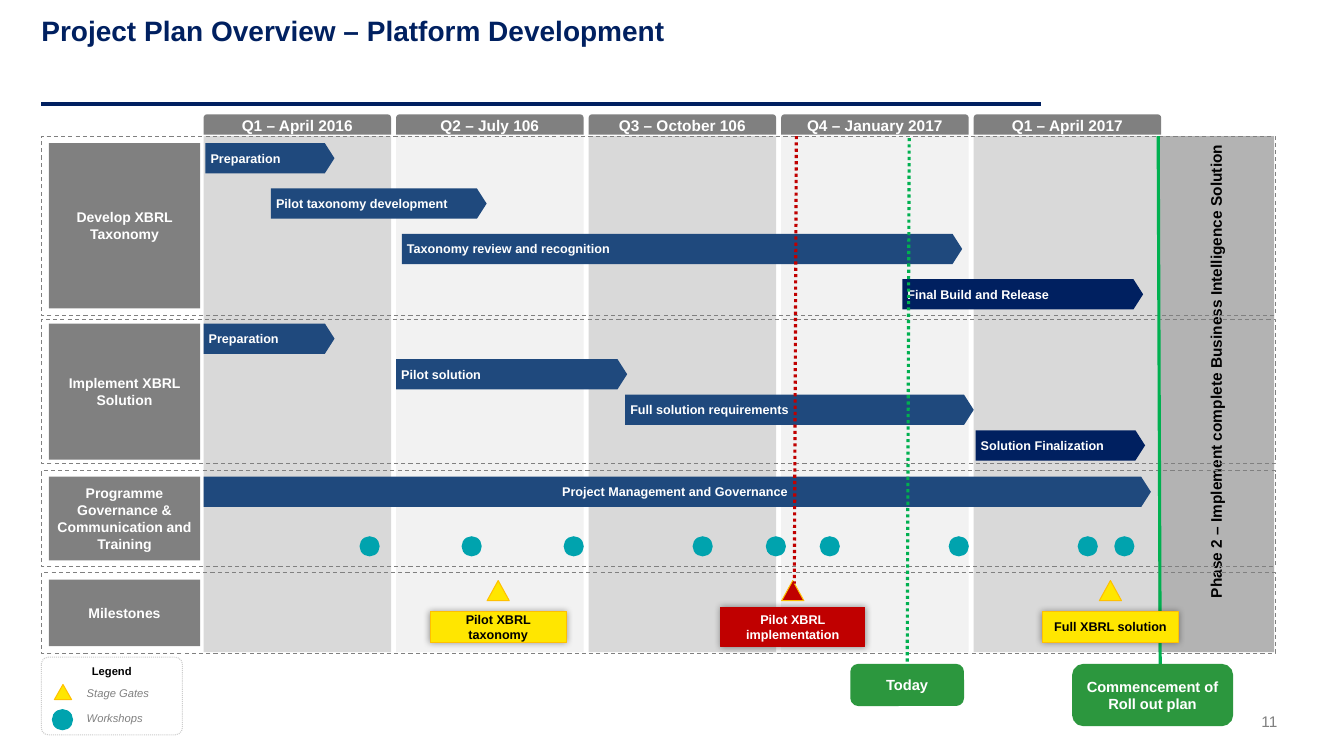
import collections
import dataclasses
import pptx
import pptx.util
import pptx.dml.color
import pptx.enum.dml
import pptx.enum.shapes
import pptx.enum.text
import pptx.oxml
import pptx.oxml.ns

Kind = pptx.enum.shapes.MSO_SHAPE
Dash = pptx.enum.dml.MSO_LINE
Align = pptx.enum.text.PP_ALIGN
Anchor = pptx.enum.text.MSO_ANCHOR
Box = collections.namedtuple("Box", "x y w h")


@dataclasses.dataclass(frozen=True)
class Theme:
    """Colours, type sizes and grid measures of the plan."""
    font: str = "Arial"
    navy: str = "002060"
    blue: str = "1F497D"
    gray: str = "808080"
    dark: str = "D9D9D9"
    light: str = "F2F2F2"
    phase: str = "B3B3B3"
    pale: str = "CCCCCC"
    teal: str = "00A3AE"
    yellow: str = "FFE600"
    gold: str = "FFC000"
    red: str = "C00000"
    green: str = "00B050"
    leaf: str = "2C973E"
    white: str = "FFFFFF"
    black: str = "000000"
    title: float = 20
    head: float = 11
    call: float = 10.5
    tag: float = 10
    bar: float = 9
    note: float = 8
    cell: float = 0.1
    pitch: float = 19.1
    band: float = 18.6


T = Theme()
PAGE = Box(0, 0, 133.33, 75)
PLAN = Box(4.1, 13.5, 122.4, 51.2)
TIME = Box(20.2, 13.5, 5 * T.pitch, 51.2)
QUARTERS = ["Q1 – April 2016", "Q2 – July 106", "Q3 – October 106",
            "Q4 – January 2017", "Q1 – April 2017"]
LANES = [
    ("Develop XBRL Taxonomy", 13.5, 17.8, 0.7, 4.5, [
        ("Preparation", 0.01, 0.67, T.blue),
        ("Pilot taxonomy development", 0.35, 1.12, T.blue),
        ("Taxonomy review and recognition", 1.03, 2.91, T.blue),
        ("Final Build and Release", 3.63, 1.25, T.navy)]),
    ("Implement XBRL Solution", 31.7, 14.3, 0.4, 3.53, [
        ("Preparation", 0, 0.68, T.blue),
        ("Pilot solution", 1, 1.2, T.blue),
        ("Full solution requirements", 2.19, 1.81, T.blue),
        ("Solution Finalization", 4.01, 0.88, T.navy)]),
    ("Programme Governance & Communication and Training", 46.7, 9.5, 0.6, 0, [
        ("Project Management and Governance", 0, 4.92, T.blue)]),
    ("Milestones", 56.8, 8, 0.7, 0, []),
]
SHOPS = [0.81, 1.34, 1.87, 2.54, 2.92, 3.2, 3.87, 4.54, 4.73]
GATES = [("Pilot XBRL taxonomy", 1.53, 13.5, 3, T.yellow, T.gold, T.black),
         ("Pilot XBRL implementation", 3.06, 14.3, 3.9, T.red, T.red, T.white),
         ("Full XBRL solution", 4.71, 13.5, 3, T.yellow, T.gold, T.black)]


def rgb(tint):
    """Turn a hex string into a colour."""
    return pptx.dml.color.RGBColor.from_string(tint)


def emu(*cells):
    """Turn grid cells into slide lengths."""
    return [pptx.util.Inches(n * T.cell) for n in cells]


def col(quarter):
    """Give the grid column at which a quarter starts."""
    return TIME.x + quarter * T.pitch


def write(item, text, size, tint, align=Align.LEFT, anchor=Anchor.MIDDLE,
          pad=(0.5, 0.5), bold=True, italic=False, wrap=True, lead=None):
    """Put one formatted run into a shape."""
    frame = item.text_frame
    frame.word_wrap = wrap
    frame.auto_size = pptx.enum.text.MSO_AUTO_SIZE.NONE
    frame.vertical_anchor = anchor
    frame.margin_left, frame.margin_top = emu(*pad)
    frame.margin_right, frame.margin_bottom = emu(*pad)
    line = frame.paragraphs[0]
    line.alignment = align
    if lead:
        line.line_spacing = lead
    run = line.add_run()
    run.text = text
    run.font.name, run.font.size = T.font, pptx.util.Pt(size)
    run.font.bold, run.font.italic = bold, italic
    run.font.color.rgb = rgb(tint)


def label(slide, box, text, size, tint, **look):
    """Add a text box."""
    item = slide.shapes.add_textbox(*emu(*box))
    write(item, text, size, tint, **look)
    return item


def shape(slide, kind, box, fill=None, edge=None, width=0.75, dash=None):
    """Add a flat preset shape."""
    item = slide.shapes.add_shape(kind, *emu(*box))
    item.shadow.inherit = False
    if fill:
        item.fill.solid()
        item.fill.fore_color.rgb = rgb(fill)
    else:
        item.fill.background()
    if edge:
        item.line.color.rgb = rgb(edge)
        item.line.width = pptx.util.Pt(width)
        item.line.dash_style = dash
    else:
        item.line.fill.background()
    return item


def rule(slide, start, end, tint, width=2.25, dash=None):
    """Add a straight line."""
    item = slide.shapes.add_connector(
        pptx.enum.shapes.MSO_CONNECTOR.STRAIGHT, *emu(*start, *end))
    item.line.color.rgb = rgb(tint)
    item.line.width = pptx.util.Pt(width)
    item.line.dash_style = dash
    pptx.oxml.ns.qn("a:effectLst")
    item._element.spPr.append(pptx.oxml.parse_xml(
        '<a:effectLst %s/>' % pptx.oxml.ns.nsdecls("a")))


def glow(item):
    """Give a shape a soft centred shadow."""
    effects = item._element.spPr.find(pptx.oxml.ns.qn("a:effectLst"))
    effects.append(pptx.oxml.parse_xml(
        '<a:outerShdw %s blurRad="63500" dist="0"><a:srgbClr val="%s">'
        '<a:alpha val="40000"/></a:srgbClr></a:outerShdw>'
        % (pptx.oxml.ns.nsdecls("a"), T.black)))


def header(slide, box):
    """Place the title, its rule and the page number."""
    title = slide.shapes.title
    title.left, title.top, title.width, title.height = emu(*box)
    write(title, "Project Plan Overview – Platform Development", T.title,
          T.navy, anchor=Anchor.TOP, pad=(0, 0.4), lead=0.85)
    base = box.y + box.h + 0.1
    rule(slide, (box.x, base), (box.x + box.w, base), T.navy, 3)
    label(slide, Box(PAGE.w - 17.1, PAGE.h - 4.4, 10.5, 2.2), "11", T.head,
          T.gray, align=Align.RIGHT, anchor=Anchor.TOP, pad=(0, 0), bold=False)


def calendar(slide, box):
    """Place the quarter bands, their heads and the next phase."""
    for n, name in enumerate(QUARTERS):
        shape(slide, Kind.RECTANGLE, Box(col(n), box.y, T.band, box.h),
              T.light if n % 2 else T.dark)
        head = shape(slide, Kind.ROUND_2_SAME_RECTANGLE,
                     Box(col(n), box.y - 2.15, T.band, 2), T.gray)
        write(head, name, T.head, T.white, align=Align.CENTER, wrap=False)
    left, wide = 114.9, 11.5
    shape(slide, Kind.RECTANGLE, Box(left, box.y, wide, box.h), T.phase)
    text = label(slide, Box(97.5, 35.4, 46.2, 2.9),
                 "Phase 2 – Implement complete Business Intelligence Solution",
                 T.head, T.black, align=Align.CENTER, wrap=False)
    text.rotation = 270


def lane(slide, box, name, pad, step, bars):
    """Place one dashed lane with its tag and bars."""
    shape(slide, Kind.RECTANGLE, box, None, T.gray, 0.75, Dash.DASH)
    tag = shape(slide, Kind.RECTANGLE,
                Box(box.x + 0.75, box.y + pad, 15, box.h - 2 * pad), T.gray)
    write(tag, name, T.tag, T.white, align=Align.CENTER)
    for n, (text, start, span, tint) in enumerate(bars):
        bar = shape(slide, Kind.PENTAGON, Box(
            col(start), box.y + pad + n * step, span * T.pitch, 3), tint)
        bar.adjustments[0] = 0.32
        write(bar, text, T.bar, T.white,
              align=Align.LEFT if step else Align.CENTER)


def gates(slide, box):
    """Place the stage gates with their labels."""
    for name, spot, wide, high, fill, edge, ink in GATES:
        mid = col(spot)
        shape(slide, Kind.ISOSCELES_TRIANGLE,
              Box(mid - 1.1, box.y + 0.8, 2.2, 2), fill, T.gold)
        card = shape(slide, Kind.RECTANGLE, Box(
            mid - wide / 2, box.y + 5.4 - high / 2, wide, high), fill, edge)
        glow(card)
        write(card, name, T.bar, ink, align=Align.CENTER, pad=(0.9, 0.4))


def legend(slide, box):
    """Place the legend."""
    frame = shape(slide, Kind.ROUNDED_RECTANGLE, box, None, T.pale, 0.75,
                  Dash.ROUND_DOT)
    frame.adjustments[0] = 0.09
    write(frame, "Legend", T.note, T.black, align=Align.CENTER,
          anchor=Anchor.TOP, pad=(1, 0.5))
    shape(slide, Kind.ISOSCELES_TRIANGLE,
          Box(box.x + 1.3, box.y + 2.7, 1.7, 1.5), T.yellow, T.gold)
    shape(slide, Kind.OVAL, Box(box.x + 1.1, box.y + 5.2, 2, 2), T.teal, T.teal)
    for n, name in enumerate(["Stage Gates", "Workshops"]):
        label(slide, Box(box.x + 4.1, box.y + 2.7 + 2.5 * n, 6.7, 1.5), name,
              T.note, T.gray, anchor=Anchor.TOP, pad=(0.4, 0.4), bold=False,
              italic=True, wrap=False, lead=0.85)


def callout(slide, box, name):
    """Place a rounded green label."""
    card = shape(slide, Kind.ROUNDED_RECTANGLE, box, T.leaf, T.leaf, 2)
    write(card, name, T.call, T.white, align=Align.CENTER, pad=(1, 0.5))


def main():
    """Build and save the slide."""
    deck = pptx.Presentation()
    deck.slide_width, deck.slide_height = emu(PAGE.w, PAGE.h)
    slide = deck.slides.add_slide(deck.slide_layouts[5])
    header(slide, Box(PLAN.x, 1.4, 99.2, 8.8))
    calendar(slide, TIME)
    for name, top, high, pad, step, bars in LANES:
        lane(slide, Box(PLAN.x, top, PLAN.w, high), name, pad, step, bars)
    for spot in SHOPS:
        shape(slide, Kind.OVAL, Box(col(spot), 53.2, 2, 2), T.teal)
    rule(slide, (114.9, PLAN.y), (115.1, 66), T.green)
    gates(slide, Box(PLAN.x, 56.8, PLAN.w, 8))
    legend(slide, Box(PLAN.x, 65.2, 14, 7.7))
    callout(slide, Box(84.5, 66, 11, 3.9), "Today")
    callout(slide, Box(106.5, 66, 15.7, 5.9), "Commencement of Roll out plan")
    rule(slide, (90.2, 13.7), (90, 66), T.green, dash=Dash.ROUND_DOT)
    rule(slide, (79, PLAN.y), (78.8, 57.9), T.red, dash=Dash.ROUND_DOT)


    deck.save("out.pptx")


if __name__ == "__main__":
    main()
